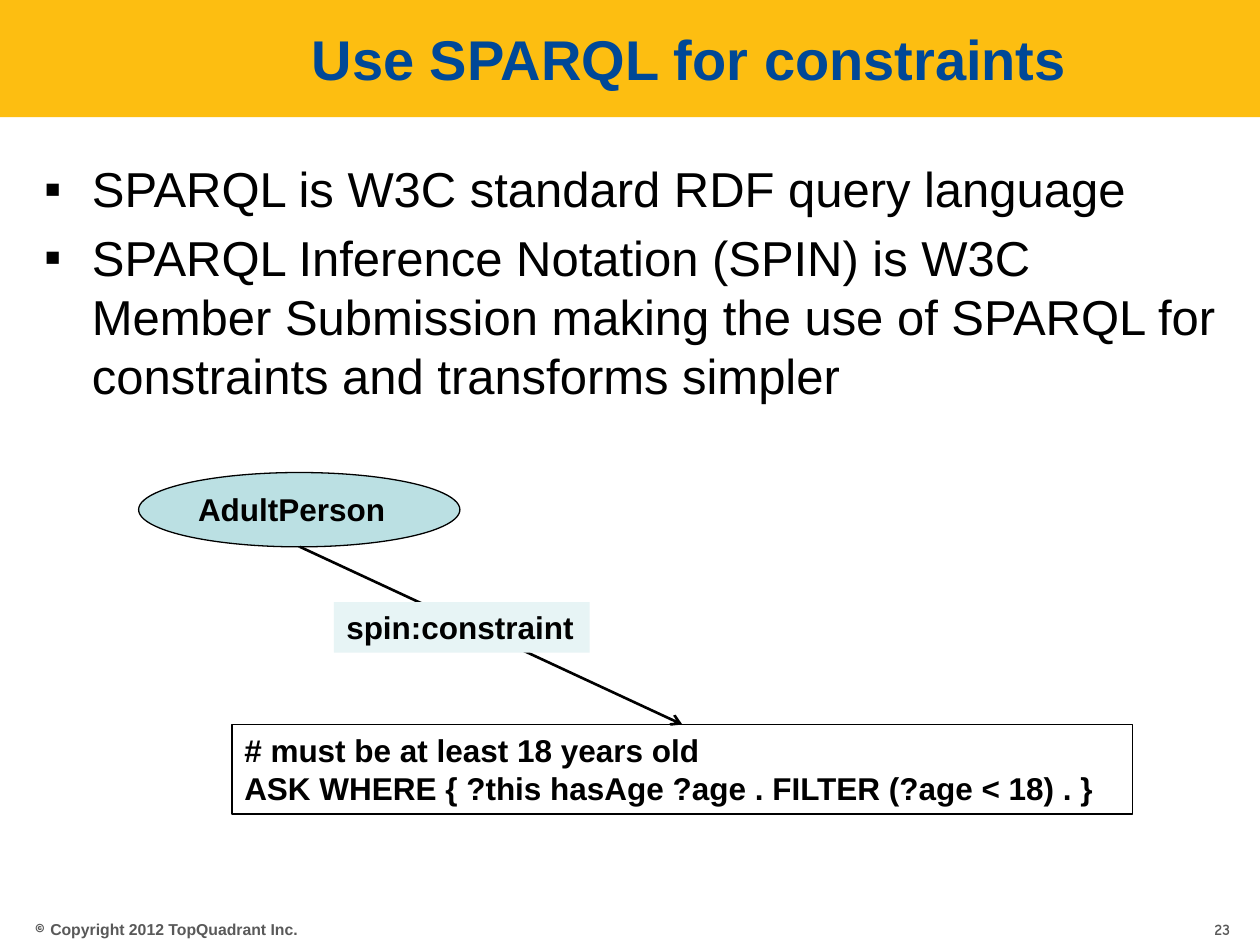
from lxml import etree
from pptx import Presentation
from pptx import util as u
from pptx.dml.color import RGBColor
from pptx.enum import shapes, text
from pptx.oxml.ns import qn

BLACK = "000000"
GREY = "595959"
BULLETS = [
    "SPARQL is W3C standard RDF query language",
    "SPARQL Inference Notation (SPIN) is W3C Member Submission making "
    "the use of SPARQL for constraints and transforms simpler",
]
QUERY = [
    "# must be at least 18 years old",
    "ASK WHERE { ?this hasAge ?age . FILTER (?age < 18) . }",
]


def color(value):
    return RGBColor.from_string(value)


def place(item, left, top, width, height):
    item.left, item.top = u.Inches(left), u.Inches(top)
    item.width, item.height = u.Inches(width), u.Inches(height)


def set_font(font, size, hex_color=BLACK, bold=True, name="Arial"):
    font.name, font.size, font.bold = name, u.Pt(size), bold
    font.color.rgb = color(hex_color)


def add_node(page, kind, left, top, width, height, lines=(),
             fill=None, outlined=True, wrap=True):
    """Add a diagram shape with bold, left-aligned lines of text."""
    node = page.shapes.add_shape(kind, u.Inches(left), u.Inches(top),
                                 u.Inches(width), u.Inches(height))
    node.shadow.inherit = False
    if fill:
        node.fill.solid()
        node.fill.fore_color.rgb = color(fill)
    else:
        node.fill.background()
    if outlined:
        node.line.color.rgb = color(BLACK)
        node.line.width = u.Pt(0.75)
    else:
        node.line.fill.background()
    if lines:
        frame = node.text_frame
        frame.text = "\n".join(lines)
        frame.word_wrap = wrap
        frame.vertical_anchor = text.MSO_ANCHOR.TOP
        for para in frame.paragraphs:
            para.alignment = text.PP_ALIGN.LEFT
            set_font(para.font, 18)
    return node


def add_arrow(page, start, target):
    """Run an arrow from a point to the top middle of a rectangle."""
    x, y = (u.Inches(value) for value in start)
    arrow = page.shapes.add_connector(shapes.MSO_CONNECTOR.STRAIGHT, x, y, x, y)
    arrow.end_connect(target, 0)
    arrow.line.color.rgb = color(BLACK)
    arrow.line.width = u.Pt(1.5)
    etree.SubElement(arrow.line._get_or_add_ln(), qn("a:tailEnd"), type="arrow")
    etree.SubElement(arrow.element.spPr, qn("a:effectLst"))


def add_footer(page, left, width, spans):
    box = page.shapes.add_textbox(u.Inches(left), u.Inches(7.25),
                                  u.Inches(width), u.Inches(0.25))
    box.text_frame.word_wrap = True
    box.text_frame.vertical_anchor = text.MSO_ANCHOR.MIDDLE
    para = box.text_frame.paragraphs[0]
    for words, font_name in spans:
        span = para.add_run()
        span.text = words
        set_font(span.font, 9, GREY, name=font_name)


def fill_title(title):
    place(title, 0.94, 0, 9.06, 0.93)
    frame = title.text_frame
    frame.text = "Use SPARQL for constraints"
    frame.auto_size = text.MSO_AUTO_SIZE.NONE
    frame.vertical_anchor = text.MSO_ANCHOR.MIDDLE
    para = frame.paragraphs[0]
    para.alignment = text.PP_ALIGN.CENTER
    set_font(para.font, 32, "004897")


def fill_body(body):
    place(body, 0.25, 1.21, 9.5, 6.04)
    frame = body.text_frame
    frame.text = "\n".join(BULLETS)
    frame.auto_size = text.MSO_AUTO_SIZE.NONE
    for index, para in enumerate(frame.paragraphs):
        props = para._p.get_or_add_pPr()
        indent = u.Inches(0.38)
        props.set("marL", str(indent))
        props.set("indent", str(-indent))
        etree.SubElement(props, qn("a:buChar"), char="▪")
        para.space_before = u.Pt(5.6 if index else 0)
        set_font(para.font, 28, bold=False)


def main():
    deck = Presentation()
    deck.slide_width, deck.slide_height = u.Inches(10), u.Inches(7.5)
    page = deck.slides.add_slide(deck.slide_layouts[1])
    rect, oval = shapes.MSO_SHAPE.RECTANGLE, shapes.MSO_SHAPE.OVAL

    # Title band, behind the title
    band = add_node(page, rect, 0, 0, 10, 0.93, fill="FDBE11", outlined=False)
    band.element.getparent().insert(2, band.element)

    # Title and bullets
    fill_title(page.shapes.title)
    fill_body(page.placeholders[1])

    # Constraint diagram
    query = add_node(page, rect, 1.84, 5.75, 7.15, 0.71, QUERY)
    add_node(page, oval, 1.1, 3.75, 2.55, 0.59, ["AdultPerson"], fill="BBE0E3")
    add_arrow(page, (2.38, 4.34), query)
    add_node(page, rect, 2.65, 4.78, 2.03, 0.4, ["spin:constraint"],
             fill="E7F4F5", outlined=False, wrap=False)

    # Footer
    add_footer(page, 0.18, 9.36, [("© ", "Comic Neue"),
                                  ("Copyright 2012 TopQuadrant Inc.", "Arial")])
    add_footer(page, 9.54, 0.46, [("23", "Comic Neue")])

    deck.save("out.pptx")


if __name__ == "__main__":
    main()
